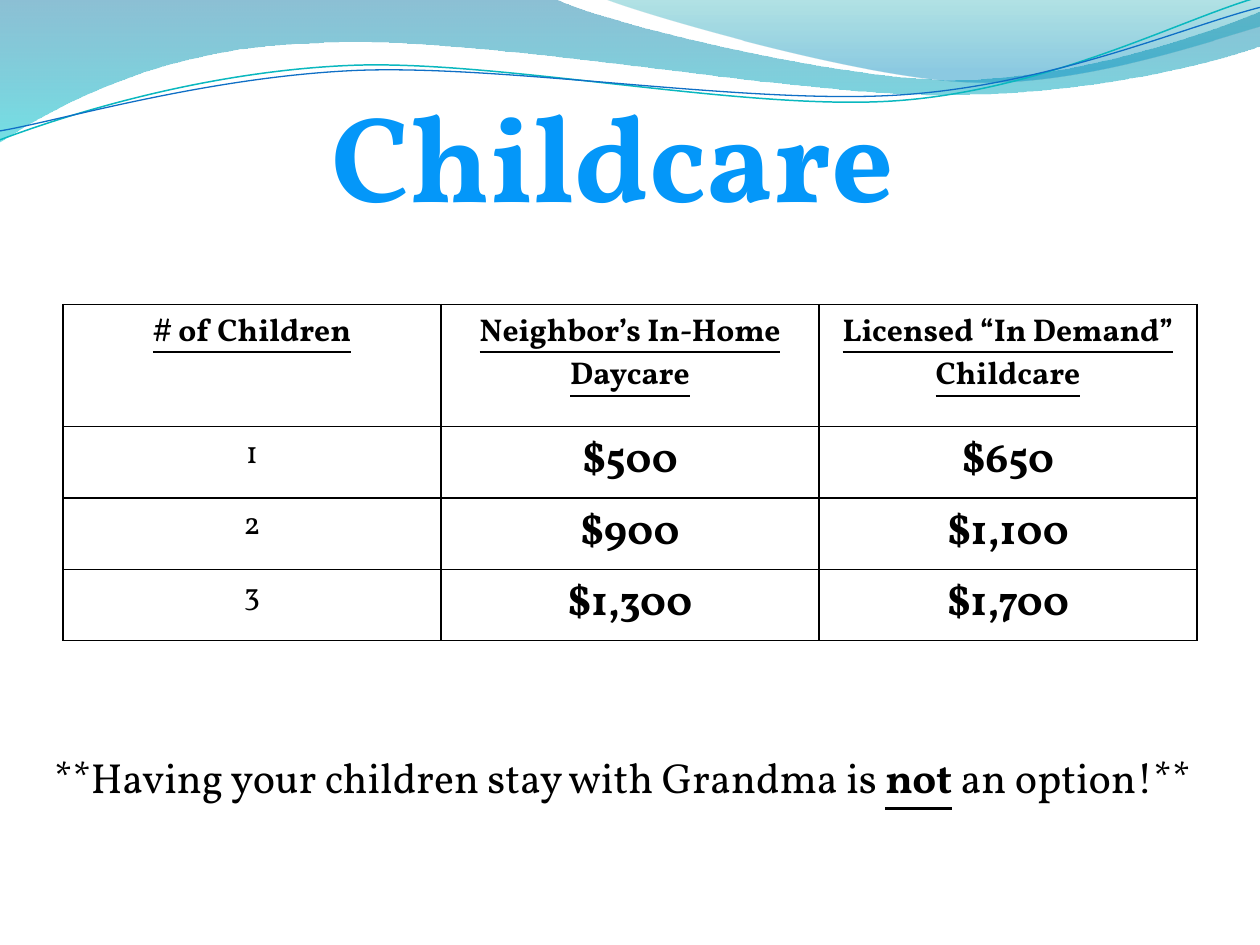
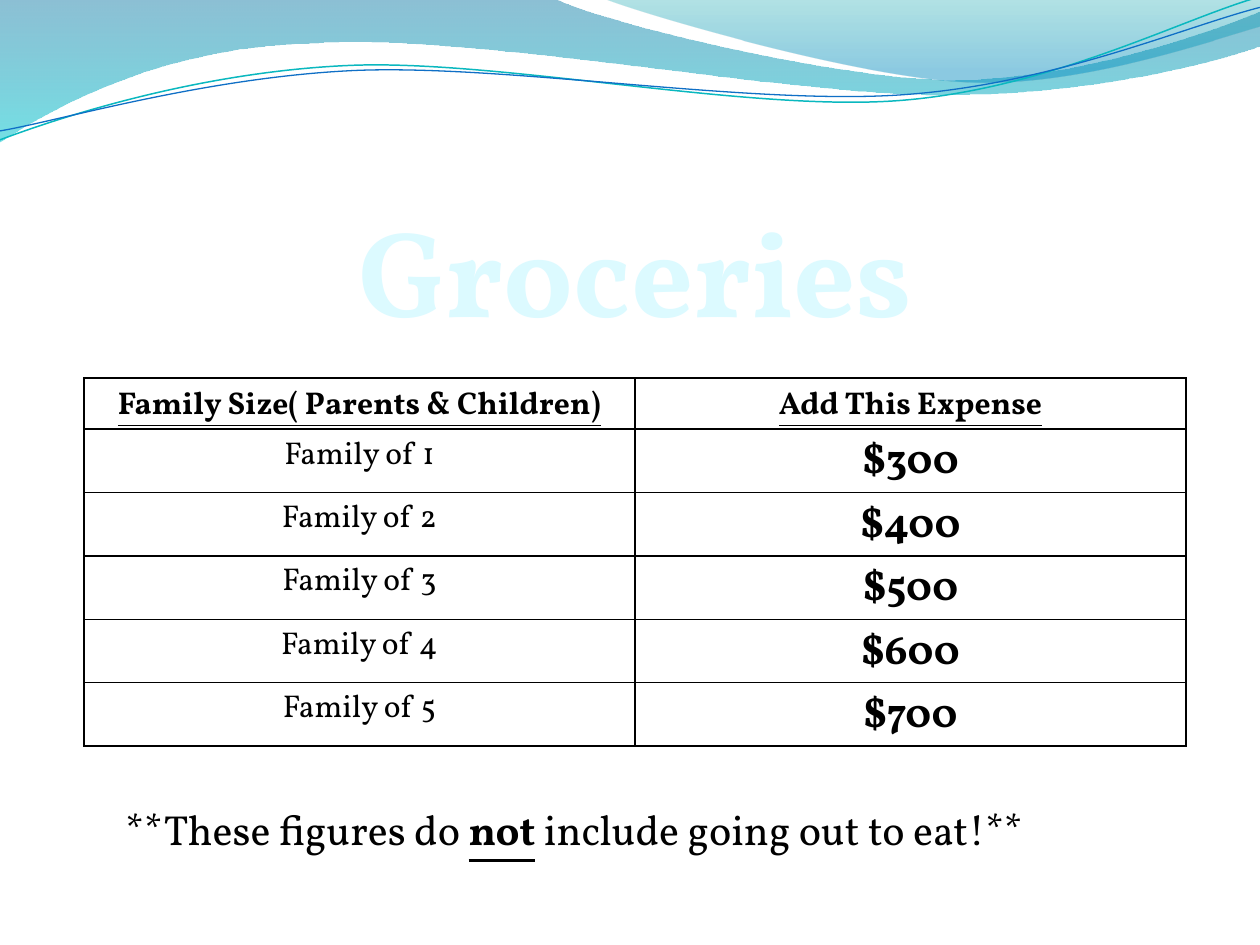
from dataclasses import dataclass

from lxml.etree import SubElement
from pptx import Presentation
from pptx.dml.color import RGBColor
from pptx.enum.text import MSO_ANCHOR, MSO_AUTO_SIZE, PP_ALIGN
from pptx.oxml import parse_xml
from pptx.oxml.ns import nsdecls, qn
from pptx.util import Cm, Pt


@dataclass(frozen=True)
class Theme:
    font: str = "Vollkorn"
    ink: str = "000000"
    teal: str = "0AB8BF"
    blue: str = "0F6FC6"
    pale: str = "DCFAFF"
    pale_edge: str = "00637F"
    # Gradient stops: position %, colour, opacity %
    title_blue: tuple = ((0, "7DC4FF", 100), (75, "0497F9", 100), (100, "0074A1", 100))
    wide_band: tuple = ((0, "0074A1", 45), (100, "00C6CF", 55))
    right_band: tuple = ((0, "00A1A9", 30), (80, "008BBF", 45))
    title_size: int = 70
    large: int = 24
    body: int = 18


T = Theme()


def gradient(stops):
    """Return a top-to-bottom gradient fill element."""
    gs = "".join(
        f'<a:gs pos="{pos * 1000}"><a:srgbClr val="{color}">'
        f'<a:alpha val="{alpha * 1000}"/></a:srgbClr></a:gs>'
        for pos, color, alpha in stops)
    return parse_xml(f'<a:gradFill {nsdecls("a")}><a:gsLst>{gs}</a:gsLst>'
                     '<a:lin ang="5400000" scaled="0"/></a:gradFill>')


def add_run(p, text, size, bold=False, underline=False, color=T.ink):
    r = p.add_run()
    r.text = text
    f = r.font
    f.name, f.size, f.bold, f.underline = T.font, Pt(size), bold, underline
    f.color.rgb = RGBColor.from_string(color)
    return r


prs = Presentation()
prs.slide_width, prs.slide_height = Cm(25.4), Cm(19.05)
layout = prs.slide_layouts[5]

# Waves in cm: fill stops, line colour and width, start, then segments
# (two numbers make a straight line, six make a Bézier curve)
waves = [
    (T.wide_band, None, 0, (0, 0), [
        (11.18, -0.03), (12.09, 0.43, 16.87, 1.6, 19.25, 1.6),
        (21.67, 1.6, 24.33, 0.66, 25.4, 0.23), (25.43, 0.91),
        (24.97, 1.12, 22.1, 1.93, 18.95, 1.91),
        (15.8, 1.91, 9.7, 0.71, 6.53, 0.86),
        (3.28, 0.91, 1.17, 2.11, -0.03, 2.87)]),
    (T.right_band, None, 0, (12.17, -0.03), [
        (12.93, 0.28, 17.32, 1.57, 19.53, 1.65),
        (21.74, 1.75, 24.41, 0.81, 25.4, 0.53), (25.4, 0)]),
    (None, T.teal, 0.85, (0, 2.82), [
        (1.22, 2.36, 4.01, 1.45, 7.04, 1.32),
        (10.03, 1.19, 15.06, 2.26, 18.11, 2.03),
        (21.16, 1.8, 23.83, 0.38, 25.35, -0.05)]),
    (None, T.blue, 0.75, (0, 2.64), [
        (1.19, 2.44, 4.17, 1.55, 7.19, 1.42),
        (10.24, 1.3, 15.16, 2.13, 18.21, 1.91),
        (21.23, 1.7, 23.9, 0.53, 25.4, 0.15)]),
]

# Slide contents; boxes are left, top, width, height in cm,
# row_heights and margins are for the heading row and the other rows
slides = [
    dict(title="Childcare ", title_box=(3.81, 1.48, 17.58, 3.25),
         title_fill=T.title_blue,
         table_box=(1.27, 6.14, 22.86), row_heights=(2.46, 1.42),
         margins_top=(0.13, 0.13), margin_bottom=0.13,
         rows=[("# of Children", "Neighbor’s In-Home Daycare",
                "Licensed “In Demand” Childcare"),
               ("1", "$500", "$650"),
               ("2", "$900", "$1,100"),
               ("3", "$1,300", "$1,700")],
         note=("**Having your children stay with Grandma is ", " an option!**"),
         note_box=(0.84, 15.03, 24.56, 1.27)),
    dict(title="Groceries", title_box=(3.18, 3.81, 19.25, 3.25),
         title_fill=None,
         table_box=(1.69, 7.62, 22.22), row_heights=(1.03, 1.27),
         margins_top=(0.13, 0.1), margin_bottom=0,
         rows=[("Family Size( Parents & Children)", "Add This Expense")]
         + [(f"Family of {n}", f"${200 + 100 * n}") for n in range(1, 6)],
         note=("**These figures do ", " include going out to eat!**"),
         note_box=(2.28, 16.08, 21.06, 1.27)),
]

for number, data in enumerate(slides):
    s = prs.slides.add_slide(layout)

    # Waves: drawn once, then moved to the shared layout
    if number == 0:
        for i, (stops, color, width, start, segments) in enumerate(waves):
            points = [(Cm(seg[k]), Cm(seg[k + 1]))
                      for seg in segments for k in range(0, len(seg), 2)]
            fb = s.shapes.build_freeform(Cm(start[0]), Cm(start[1]))
            fb.add_line_segments(points, close=stops is not None)
            sp = fb.convert_to_shape()

            # Join each three vertices of a curve into one Bézier segment
            outline = sp.element.find(".//" + qn("a:path"))
            vertices = iter(outline.findall(qn("a:lnTo")))
            for seg in segments:
                vertex = next(vertices)
                if len(seg) == 6:
                    vertex.tag = qn("a:cubicBezTo")
                    for _ in range(2):
                        extra = next(vertices)
                        vertex.append(extra[0])
                        outline.remove(extra)

            sp.shadow.inherit = False
            sp.fill.background()
            if stops:
                sp.line.fill.background()
                no_fill = sp.element.spPr.find(qn("a:noFill"))
                sp.element.spPr.replace(no_fill, gradient(stops))
            else:
                sp.line.color.rgb = RGBColor.from_string(color)
                sp.line.width = Pt(width)
            layout.shapes.element.insert(2 + i, sp.element)

    # Title
    sp = s.shapes.title
    sp.left, sp.top, sp.width, sp.height = map(Cm, data["title_box"])
    tf = sp.text_frame
    tf.word_wrap, tf.auto_size = True, MSO_AUTO_SIZE.NONE
    tf.vertical_anchor = MSO_ANCHOR.TOP
    p = tf.paragraphs[0]
    p.alignment = PP_ALIGN.CENTER
    r = add_run(p, data["title"], T.title_size, bold=True, color=T.pale)
    rPr = r.font._element
    if data["title_fill"]:
        rPr.replace(rPr.find(qn("a:solidFill")), gradient(data["title_fill"]))
    else:
        rPr.insert(0, parse_xml(
            f'<a:ln {nsdecls("a")} w="12700"><a:solidFill>'
            f'<a:srgbClr val="{T.pale_edge}"/></a:solidFill></a:ln>'))

    # Table
    rows = data["rows"]
    left, top, width = data["table_box"]
    head_h, row_h = data["row_heights"]
    n_cols = len(rows[0])
    table = s.shapes.add_table(
        len(rows), n_cols, Cm(left), Cm(top), Cm(width),
        Cm(head_h + row_h * (len(rows) - 1))).table
    table.first_row = table.horz_banding = False
    for col in table.columns:
        col.width = Cm(width / n_cols)
    for i, texts in enumerate(rows):
        table.rows[i].height = Cm(row_h if i else head_h)
        for j, text in enumerate(texts):
            cell = table.cell(i, j)
            cell.margin_top = Cm(data["margins_top"][i > 0])
            cell.margin_bottom = Cm(data["margin_bottom"])
            p = cell.text_frame.paragraphs[0]
            p.alignment = PP_ALIGN.CENTER
            is_head, is_price = i == 0, i > 0 and j > 0
            add_run(p, text, T.large if is_price else T.body,
                    bold=is_head or is_price, underline=is_head)
            tcPr = cell._tc.get_or_add_tcPr()
            for side in ("lnL", "lnR", "lnT", "lnB"):
                ln = SubElement(tcPr, qn(f"a:{side}"), w="12700")
                fill = SubElement(ln, qn("a:solidFill"))
                SubElement(fill, qn("a:srgbClr"), val=T.ink)
            cell.fill.background()

    # Note below the table
    tf = s.shapes.add_textbox(*map(Cm, data["note_box"])).text_frame
    tf.word_wrap = True
    p = tf.paragraphs[0]
    before, after = data["note"]
    add_run(p, before, T.large)
    add_run(p, "not", T.large, bold=True, underline=True)
    add_run(p, after, T.large)

prs.save("out.pptx")
